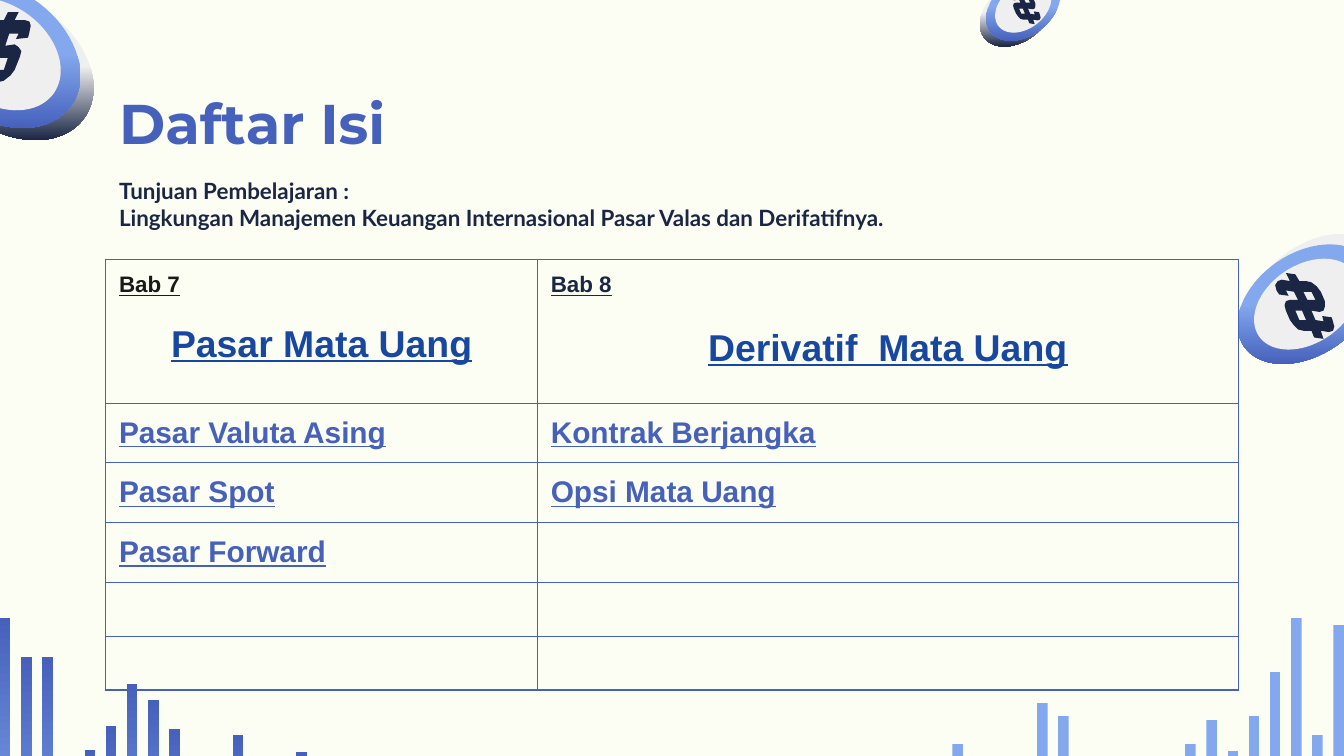
import math

import lxml.etree
import pptx
import pptx.dml.color
import pptx.enum.shapes
import pptx.enum.text
import pptx.oxml
import pptx.oxml.ns
import pptx.util

Cm = pptx.util.Cm
Pt = pptx.util.Pt
BLUE, SKY, NAVY, PALE = "4661BC", "83A8ED", "1A2644", "EFEFEF"
DOWN, UP = 270, 90


def paint(fill, *tones, angle=DOWN, start=0.5):
    """Fill with one tone, or with a gradient of two that begins at start."""
    rgb = [pptx.dml.color.RGBColor.from_string(tone) for tone in tones]
    if len(rgb) == 1:
        fill.solid()
        fill.fore_color.rgb = rgb[0]
        return
    fill.gradient()
    fill.gradient_angle = angle
    for stop, tone, place in zip(fill.gradient_stops, rgb, (start, 1)):
        stop.color.rgb = tone
        stop.position = place


def write(para, text, font="Arial", size=16, tone=BLUE, line=False,
          align=pptx.enum.text.PP_ALIGN.LEFT, after=0):
    para.alignment = align
    para.space_before, para.space_after = Pt(0), Pt(after)
    run = para.add_run()
    run.text = text
    run.font.name, run.font.size = font, Pt(size)
    run.font.bold, run.font.underline = True, line
    paint(run.font.fill, tone)


deck = pptx.Presentation()
deck.slide_width, deck.slide_height = Cm(25.4), Cm(14.29)
slide = deck.slides.add_slide(deck.slide_layouts[5])
shapes = slide.shapes
paint(slide.background.fill, "FCFEF3")
art = []

# Bars: slot, top, height; slots are 0.4 cm apart, counted from each edge
left = [(0, 11.68, 4.78), (1, 12.42, 4.8), (2, 12.42, 4.45),
        (4, 14.17, 3.66), (5, 13.72, 5.07), (6, 12.93, 4.52),
        (7, 13.23, 4.46), (8, 13.79, 3.43), (11, 13.89, 3.45),
        (14, 14.22, 5.07)]
right = [(0, 11.81, 5.04), (1, 13.89, 4.88), (2, 11.68, 5.89),
         (3, 12.7, 5.07), (4, 13.54, 5.18), (5, 14.2, 2.87),
         (6, 13.61, 3.44), (7, 14.07, 3.78), (13, 13.54, 4.52),
         (14, 13.28, 4.46), (18, 14.07, 3.45)]
for bars, edge, step, angle, start in ((left, 0, 0.4, UP, 0),
                                       (right, 25.2, -0.4, DOWN, 0.5)):
    for slot, top, tall in bars:
        bar = shapes.add_shape(pptx.enum.shapes.MSO_SHAPE.RECTANGLE,
                               Cm(edge + step * slot), Cm(top),
                               Cm(0.2), Cm(tall))
        paint(bar.fill, SKY, BLUE, angle=angle, start=start)
        art.append(bar)

# Dollar signs in hundredths of an inch: outline, then two holes
lean = [
    [(43, 0), (35, 0), (32, 6), (25, 6), (20, 8), (16, 11), (13, 16), (9, 25),
     (8, 30), (9, 34), (13, 35), (20, 35), (17, 43), (10, 43), (11, 39),
     (3, 39), (1, 43), (0, 48), (2, 52), (5, 53), (13, 53), (10, 59),
     (18, 59), (21, 53), (28, 52), (32, 51), (37, 47), (40, 43), (44, 33),
     (45, 29), (43, 26), (40, 24), (33, 25), (36, 16), (43, 16), (41, 20),
     (50, 19), (51, 15), (52, 10), (51, 7), (48, 6), (40, 6)],
    [(28, 16), (24, 25), (18, 25), (21, 16)],
    [(35, 34), (32, 43), (25, 43), (28, 34)]]
tilt = [
    [(8, 0), (11, 6), (5, 5), (2, 6), (0, 9), (1, 13), (3, 16), (10, 17),
     (8, 13), (14, 14), (17, 20), (11, 20), (8, 21), (7, 24), (8, 28),
     (11, 35), (14, 39), (17, 42), (21, 43), (27, 43), (29, 48), (36, 49),
     (34, 43), (40, 44), (43, 43), (44, 40), (43, 36), (42, 33), (35, 32),
     (36, 36), (30, 35), (27, 28), (33, 29), (36, 28), (37, 25), (37, 21),
     (34, 14), (31, 10), (27, 7), (23, 6), (18, 6), (15, 1)],
    [(21, 14), (27, 14), (30, 20), (24, 20)],
    [(15, 28), (20, 28), (23, 35), (18, 35)]]

# Coins: centre, half size, slant, shift of the edge, sign, its place and scale
coins = [
    (-0.03, 1.02, 1.55, 1.4, 73, 0.25, 0.23, lean, -0.74, 0.23, 1),
    (19.34, 0.13, 0.7, 0.64, 110, -0.12, 0.11, tilt, 19.05, -0.23, 0.55),
    (24.69, 5.75, 1.3, 1.13, 110, 0.22, -0.2, tilt, 24.1, 5.16, 1)]
for x, y, wide, high, slant, dx, dy, sign, sx, sy, scale in coins:
    for px, py, size, tones in ((x + dx, y + dy, 1, (PALE, NAVY)),
                                (x, y, 1, (SKY, BLUE)),
                                (x, y, 0.76, (PALE,))):
        ring = [(Cm(px + size * wide * math.cos(math.radians(turn))),
                 Cm(py + size * high * math.cos(math.radians(turn - slant))))
                for turn in range(0, 360, 5)]
        pen = shapes.build_freeform(*ring[0])
        pen.add_line_segments(ring[1:])
        disc = pen.convert_to_shape()
        paint(disc.fill, *tones)
        art.append(disc)
    pen = shapes.build_freeform(*sign[0][0], scale=Cm(2.54) / 100 * scale)
    pen.add_line_segments(sign[0][1:])
    for hole in sign[1:]:
        pen.move_to(*hole[0])
        pen.add_line_segments(hole[1:])
    mark = pen.convert_to_shape(Cm(sx), Cm(sy))
    mark.left, mark.top = Cm(sx), Cm(sy)
    paint(mark.fill, NAVY)
    art.append(mark)

for shape in art:
    shape.shadow.inherit = False
    shape.line.fill.background()

# Title and aim
title = shapes.title
title.left, title.top, title.width, title.height = (
    Cm(2), Cm(1.42), Cm(21.41), Cm(1.6))
aim = shapes.add_textbox(Cm(2), Cm(3.2), Cm(21.41), Cm(1.32))
for box, anchor in ((title, pptx.enum.text.MSO_ANCHOR.TOP),
                    (aim, pptx.enum.text.MSO_ANCHOR.MIDDLE)):
    frame = box.text_frame
    frame.word_wrap = True
    frame.auto_size = pptx.enum.text.MSO_AUTO_SIZE.NONE
    frame.vertical_anchor = anchor
    frame.margin_left = frame.margin_top = Cm(0.25)
    frame.margin_right = frame.margin_bottom = Cm(0.25)
aim.text_frame.margin_right = 0
write(title.text_frame.paragraphs[0], "Daftar Isi", font="Montserrat", size=30)
body = aim.text_frame
write(body.paragraphs[0], "Tunjuan Pembelajaran :",
      font="Lato", size=12, tone=NAVY)
write(body.add_paragraph(),
      "Lingkungan Manajemen Keuangan Internasional Pasar Valas dan Derifatifnya.",
      font="Lato", size=12, tone=NAVY)

# Table of contents
heads = [("Bab 7", "191919", 13.8, "Pasar Mata Uang"),
         ("Bab 8", NAVY, 16, "Derivatif  Mata Uang")]
topics = [("Pasar Valuta Asing", "Kontrak Berjangka"),
          ("Pasar Spot", "Opsi Mata Uang"),
          ("Pasar Forward", ""), ("", ""), ("", "")]
widths = [8.16, 13.24]
talls = [2.72, 1.13, 1.13, 1.13, 0.98, 0.98]
table = shapes.add_table(6, 2, Cm(2), Cm(4.9),
                         Cm(sum(widths)), Cm(sum(talls))).table
table.first_row = table.horz_banding = False
for col, wide in zip(table.columns, widths):
    col.width = Cm(wide)
for row, tall in zip(table.rows, talls):
    row.height = Cm(tall)

space = pptx.oxml.ns.nsdecls("a")
for cell in table.iter_cells():
    cell.margin_left = cell.margin_right = Cm(0.25)
    cell.margin_top = cell.margin_bottom = Cm(0.25)
    for side in "LRTB":
        cell._tc.get_or_add_tcPr().append(pptx.oxml.parse_xml(
            f'<a:ln{side} {space} w="{Pt(0.75)}"><a:solidFill>'
            f'<a:srgbClr val="{BLUE}"/></a:solidFill></a:ln{side}>'))
    cell.fill.background()

for col, (head, tone, gap, name) in enumerate(heads):
    frame = table.cell(0, col).text_frame
    write(frame.paragraphs[0], head, size=12, tone=tone, line=True, after=gap)
    write(frame.add_paragraph(), name, size=20, tone="1747A1", line=True,
          align=pptx.enum.text.PP_ALIGN.CENTER)
for row, pair in enumerate(topics, 1):
    for col, topic in enumerate(pair):
        para = table.cell(row, col).text_frame.paragraphs[0]
        if topic:
            write(para, topic, line=True)
        else:  # a small end mark keeps the empty row low
            lxml.etree.SubElement(
                para._p, pptx.oxml.ns.qn("a:endParaRPr"), sz="1200")

deck.save("out.pptx")
